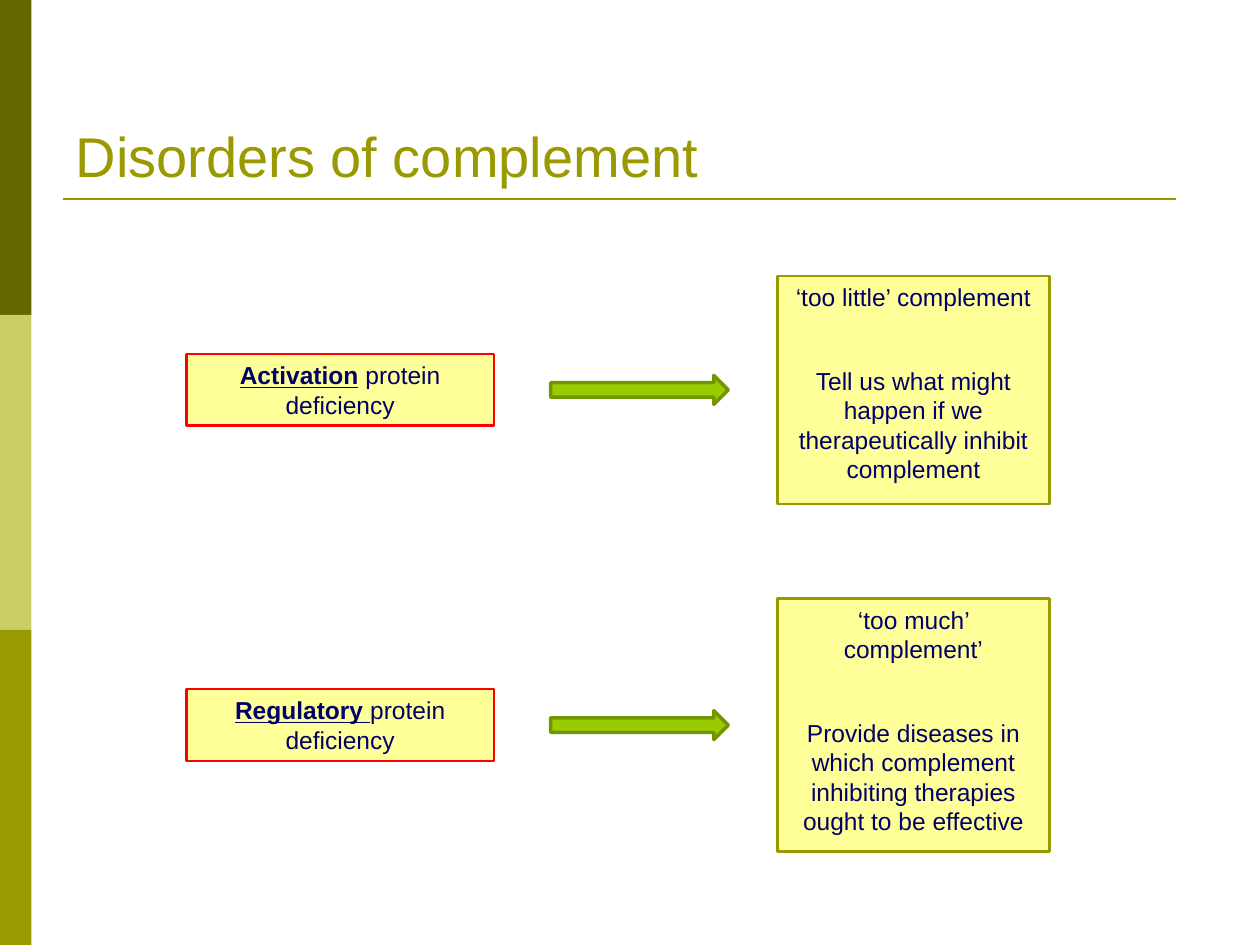
"""Builds a slide on activation and regulatory disorders of complement."""
from dataclasses import dataclass

from lxml import etree
from pptx import Presentation
from pptx.dml.color import RGBColor
from pptx.enum import shapes, text
from pptx.oxml import ns
from pptx.util import Inches, Pt


@dataclass(frozen=True)
class Theme:
    font: str = "Arial"
    olive: str = "999900"
    dark_olive: str = "666600"
    light_olive: str = "CCCC66"
    cream: str = "FFFF99"
    red: str = "FF0000"
    navy: str = "000066"
    green: str = "99CC00"
    dark_green: str = "719700"
    title_size: int = 32
    body_size: int = 14


theme = Theme()


def add_block(kind, place, fill, line=None, width=1.5):
    block = page.shapes.add_shape(kind, *(Inches(value) for value in place))
    block.shadow.inherit = False
    block.fill.solid()
    block.fill.fore_color.rgb = RGBColor.from_string(fill)
    if line:
        block.line.color.rgb = RGBColor.from_string(line)
        block.line.width = Pt(width)
    else:
        block.line.fill.background()
    return block


def add_span(para, words, size, color, strong=False):
    span = para.add_run()
    span.text = words
    span.font.name = theme.font
    span.font.size = Pt(size)
    span.font.color.rgb = RGBColor.from_string(color)
    span.font.bold = span.font.underline = strong


deck = Presentation()
deck.slide_width, deck.slide_height = Inches(10), Inches(7.5)
page = deck.slides.add_slide(deck.slide_layouts[5])

rect = shapes.MSO_SHAPE.RECTANGLE
for index, color in enumerate((theme.dark_olive, theme.light_olive, theme.olive)):
    add_block(rect, (0, 2.5 * index, 0.25, 2.5), color)

rule = page.shapes.add_connector(
    shapes.MSO_CONNECTOR.STRAIGHT, Inches(0.5), Inches(1.58), Inches(9.33), Inches(1.58)
)
rule.line.color.rgb = RGBColor.from_string(theme.olive)
rule.line.width = Pt(1.5)
etree.SubElement(rule.element.spPr, ns.qn("a:effectLst"))

title = page.shapes.title
title.left, title.top, title.width, title.height = map(Inches, (0.5, 0.3, 9, 1.25))
title.text_frame.vertical_anchor = text.MSO_ANCHOR.BOTTOM
title_para = title.text_frame.paragraphs[0]
title_para.alignment = text.PP_ALIGN.LEFT
add_span(title_para, "Disorders of complement", theme.title_size, theme.olive)

rows = [
    (2.81, "Activation", " protein deficiency", 2.19, 1.81, "‘too little’ complement",
     "Tell us what might happen if we therapeutically inhibit complement"),
    (5.47, "Regulatory ", "protein deficiency", 4.75, 2.01, "‘too much’ complement’",
     "Provide diseases in which complement inhibiting therapies ought to be effective"),
]
for top, kind, rest, effect_top, effect_height, effect, lesson in rows:
    cause_box = add_block(rect, (1.48, top, 2.44, 0.57), theme.cream, theme.red)
    add_block(shapes.MSO_SHAPE.RIGHT_ARROW, (4.37, top + 0.17, 1.41, 0.23),
              theme.green, theme.dark_green, 2)
    effect_box = add_block(rect, (6.17, effect_top, 2.16, effect_height),
                           theme.cream, theme.olive)

    contents = (
        (cause_box, [[(kind, True), (rest, False)]]),
        (effect_box, [[(effect, False)], [(lesson, False)]]),
    )
    for box, paragraphs in contents:
        frame = box.text_frame
        frame.word_wrap = True
        frame.vertical_anchor = text.MSO_ANCHOR.TOP
        for index, spans in enumerate(paragraphs):
            para = frame.add_paragraph() if index else frame.paragraphs[0]
            para.alignment = text.PP_ALIGN.CENTER
            para.space_before = Pt(31 if index else 0)
            for words, strong in spans:
                add_span(para, words, theme.body_size, theme.navy, strong)

deck.save("out.pptx")
